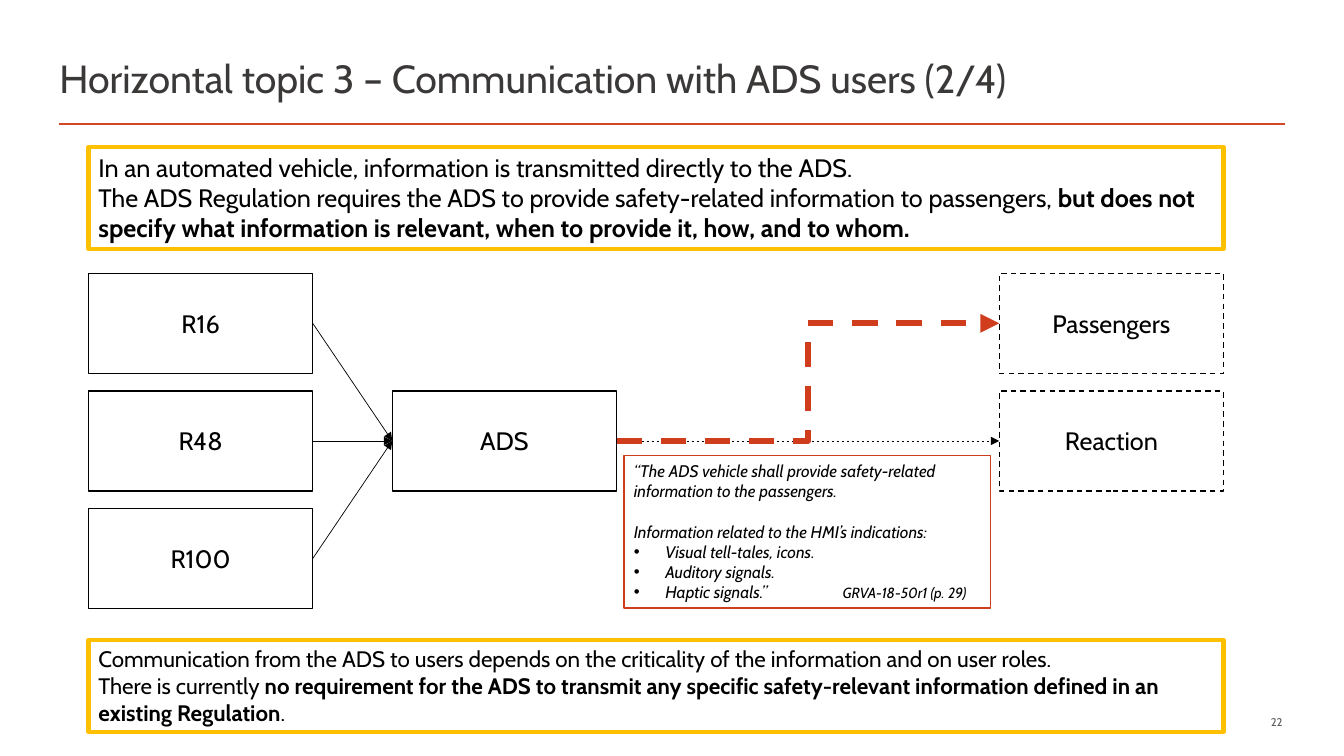
from pptx import Presentation
from pptx.dml.color import RGBColor
from pptx.enum.dml import MSO_LINE
from pptx.enum.shapes import MSO_CONNECTOR, MSO_SHAPE
from pptx.enum.text import MSO_ANCHOR, PP_ALIGN
from pptx.oxml.ns import qn
from pptx.util import Pt
from lxml.etree import SubElement

BLACK = RGBColor(0x00, 0x00, 0x00)
DARK = RGBColor(0x3B, 0x38, 0x38)
GREY = RGBColor(0x59, 0x59, 0x59)
RED = RGBColor(0xCF, 0x3D, 0x1C)
RULE = RGBColor(0xD2, 0x47, 0x26)
GOLD = RGBColor(0xFF, 0xC0, 0x00)
FONT = "Cabin"


def add_runs(para, runs, size, color=BLACK, italic=False):
    for text, bold in runs:
        run = para.add_run()
        run.text = text
        font = run.font
        font.name, font.size = FONT, Pt(size)
        font.bold, font.italic = bold, italic
        font.color.rgb = color


def add_paras(frame, paras, size, align=PP_ALIGN.LEFT, italic=False):
    frame.word_wrap = True
    for index, runs in enumerate(paras):
        para = frame.add_paragraph() if index else frame.paragraphs[0]
        para.alignment = align
        add_runs(para, runs, size, italic=italic)


def add_rect(slide, box, color, width, dash=None):
    shape = slide.shapes.add_shape(MSO_SHAPE.RECTANGLE, *map(Pt, box))
    shape.shadow.inherit = False
    shape.fill.background()
    shape.line.color.rgb = color
    shape.line.width = Pt(width)
    if dash:
        shape.line.dash_style = dash
    return shape


def add_line(slide, color, width, ends=(0, 0, 0, 0), kind=MSO_CONNECTOR.STRAIGHT,
             dash=None, head=True):
    line = slide.shapes.add_connector(kind, *map(Pt, ends))
    line.line.color.rgb = color
    line.line.width = Pt(width)
    if dash:
        line.line.dash_style = dash
    if head:
        SubElement(line.line._ln, qn("a:tailEnd"), type="triangle")
    SubElement(line._element.spPr, qn("a:effectLst"))
    return line


def link(slide, start, end, color=BLACK, width=0.5, **style):
    line = add_line(slide, color, width, **style)
    line.begin_connect(start, 3)
    line.end_connect(end, 1)


def add_title(slide, box, text):
    title = slide.shapes.title
    title.left, title.top, title.width, title.height = map(Pt, box)
    frame = title.text_frame
    frame.vertical_anchor = MSO_ANCHOR.MIDDLE
    para = frame.paragraphs[0]
    para.alignment = PP_ALIGN.LEFT
    add_runs(para, [(text, False)], 28, DARK)
    left, top, width, height = box
    low = top + height + 10.8
    add_line(slide, RULE, 2, (left + 7.2, low, left + width, low), head=False)


def add_callout(slide, box, paras, size):
    frame = add_rect(slide, box, GOLD, 3).text_frame
    frame.vertical_anchor = MSO_ANCHOR.TOP
    add_paras(frame, paras, size)


def add_quote(slide, box, lines, points, source):
    left, top, width, height = box
    frame = add_rect(slide, box, RED, 1).text_frame
    frame.vertical_anchor = MSO_ANCHOR.TOP
    add_paras(frame, [[(text, False)] for text in lines + points], 12, italic=True)
    frame.paragraphs[1].space_before = Pt(14.6)
    for para in frame.paragraphs[len(lines):]:
        props = para._p.get_or_add_pPr()
        props.set("marL", str(Pt(22.5)))
        props.set("indent", str(-Pt(22.5)))
        SubElement(props, qn("a:buFont"), typeface="Arial")
        SubElement(props, qn("a:buChar"), char="•")
    note = slide.shapes.add_textbox(
        Pt(left + 149), Pt(top + height - 21), Pt(126), Pt(20.7))
    add_paras(note.text_frame, [[(source, False)]], 10.5, italic=True)


def add_flow(slide, box):
    left, top, width, height = box
    wide, tall = 160.2, 71.5
    step = (height - tall) / 2

    def add_node(text, x, row, dash=None):
        node = add_rect(slide, (x, top + row * step, wide, tall), BLACK, 1, dash)
        frame = node.text_frame
        frame.vertical_anchor = MSO_ANCHOR.MIDDLE
        add_paras(frame, [[(text, False)]], 18, PP_ALIGN.CENTER)
        return node

    rules = [add_node(name, left, row) for row, name in enumerate(("R16", "R48", "R100"))]
    hub = add_node("ADS", left + 217, 1)
    right = left + width - wide
    users = add_node("Passengers", right, 0, MSO_LINE.DASH)
    react = add_node("Reaction", right, 1, MSO_LINE.DASH)
    for rule in rules:
        link(slide, rule, hub)
    link(slide, hub, react, dash=MSO_LINE.DASH)
    link(slide, hub, users, RED, 4.5, kind=MSO_CONNECTOR.ELBOW, dash=MSO_LINE.DASH)


def add_number(slide, box, text):
    frame = slide.shapes.add_textbox(*map(Pt, box)).text_frame
    frame.margin_top = frame.margin_bottom = 0
    frame.vertical_anchor = MSO_ANCHOR.MIDDLE
    para = frame.paragraphs[0]
    para.alignment = PP_ALIGN.RIGHT
    add_runs(para, [(text, False)], 8, GREY)


def main():
    deck = Presentation()
    deck.slide_width, deck.slide_height = Pt(960), Pt(540)
    slide = deck.slides.add_slide(deck.slide_layouts[5])
    add_title(slide, (35.3, 33.8, 882.7, 44),
              "Horizontal topic 3 – Communication with ADS users (2/4)")
    add_quote(
        slide, (445.7, 325.4, 262, 109),
        ["“The ADS vehicle shall provide safety-related information to the passengers.",
         "Information related to the HMI’s indications:"],
        ["Visual tell-tales, icons.", "Auditory signals.", "Haptic signals.”"],
        "GRVA-18-50r1 (p. 29)")
    add_flow(slide, (63.2, 195.2, 810.8, 239.5))
    add_callout(slide, (63.2, 105.1, 810.8, 72.7), [
        [("In an automated vehicle, information is transmitted directly to the ADS.", False)],
        [("The ADS Regulation requires the ADS to provide safety-related information "
          "to passengers, ", False),
         ("but does not specify what information is relevant, when to provide it, "
          "how, and to whom.", True)]], 18)
    add_callout(slide, (63.2, 457.2, 810.8, 65.5), [
        [("Communication from the ADS to users depends on the criticality of the "
          "information and on user roles.", False)],
        [("There is currently ", False),
         ("no requirement for the ADS to transmit any specific safety-relevant "
          "information defined in an existing Regulation", True),
         (".", False)]], 16)
    add_number(slide, (657.4, 510.2, 265.8, 10.8), "22")
    deck.save("out.pptx")


if __name__ == "__main__":
    main()
